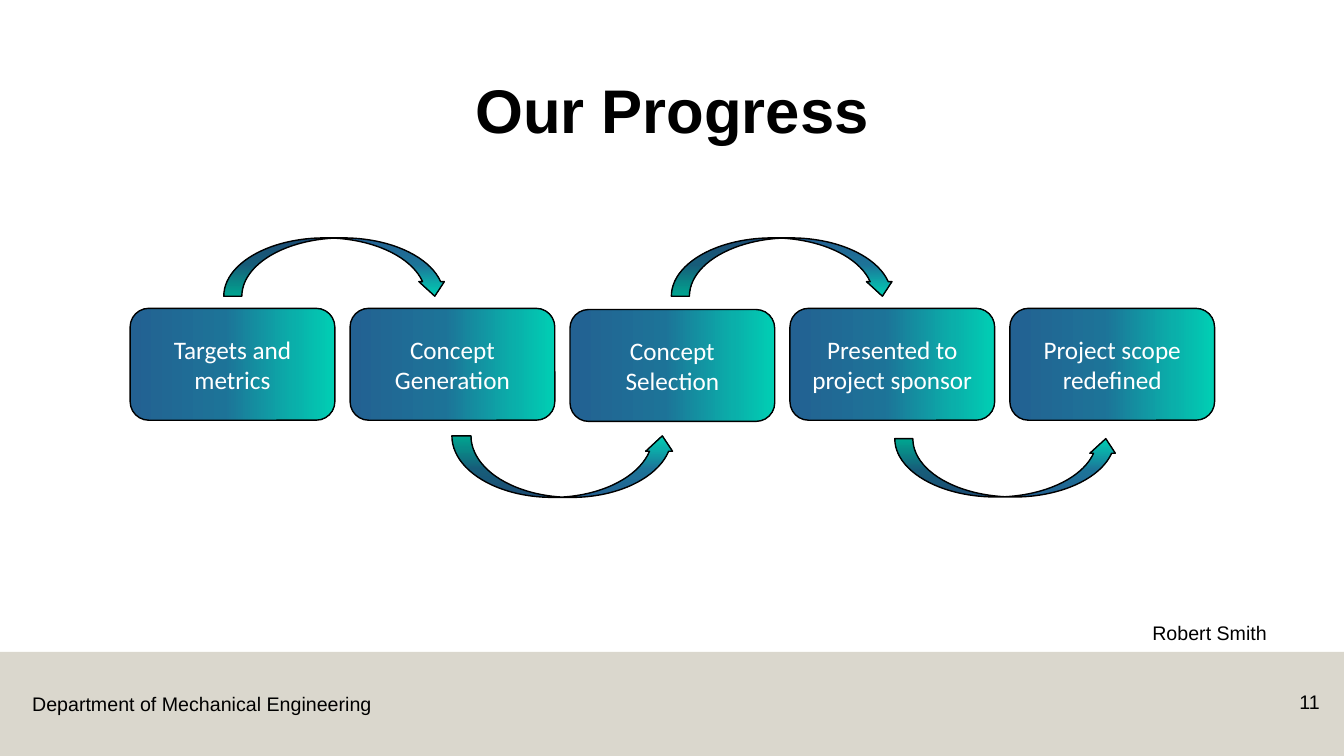
from lxml.etree import SubElement
from pptx import Presentation
from pptx.dml.color import RGBColor
from pptx.enum.shapes import MSO_SHAPE
from pptx.enum.text import MSO_ANCHOR, PP_ALIGN
from pptx.oxml.ns import qn
from pptx.util import Cm, Pt

BLACK = RGBColor(0x00, 0x00, 0x00)
WHITE = RGBColor(0xFF, 0xFF, 0xFF)
SAND = RGBColor(0xB7, 0xB0, 0x9C)
BLUE = RGBColor(0x23, 0x61, 0x92)
STEEL = RGBColor(0x1D, 0x73, 0x98)
TEAL = RGBColor(0x0A, 0xAF, 0xAA)
MINT = RGBColor(0x00, 0xCF, 0xB4)
STOPS = [(0, BLUE), (46, STEEL), (80, TEAL), (100, MINT)]

STEPS = ["Targets and metrics", "Concept Generation", "Concept Selection",
         "Presented to project sponsor", "Project scope redefined"]
# Centre of each arrow from the corner of the first step, height, above the row
ARROWS = [(5.18, -1.04, 1.47, True), (16.46, -1.04, 1.47, True),
          (10.93, 3.99, 1.55, False), (22.09, 4.02, 1.47, False)]


def write(frame, text, size, color, font="Arial", align=PP_ALIGN.LEFT):
    frame.text = text
    para = frame.paragraphs[0]
    para.alignment = align
    face = para.runs[0].font
    face.name, face.size = font, Pt(size)
    face.color.rgb = color
    return para


def label(slide, box, text, align=PP_ALIGN.LEFT):
    frame = slide.shapes.add_textbox(*map(Cm, box)).text_frame
    frame.word_wrap = True
    return write(frame, text, 14, BLACK, align=align)


def blend(shape):
    """Give a shape the blue to mint gradient and a black outline."""
    shape.shadow.inherit = False
    shape.fill.gradient()
    shape.fill.gradient_angle = 0
    stops = shape._element.spPr.find(qn("a:gradFill")).find(qn("a:gsLst"))
    for old in list(stops):
        stops.remove(old)
    for place, color in STOPS:
        stop = SubElement(stops, qn("a:gs"), pos=str(place * 1000))
        SubElement(stop, qn("a:srgbClr"), val=str(color))
    shape.line.color.rgb = BLACK
    shape.line.width = Pt(1)


def footer(slide, left, top, width, height):
    # Half-transparent band
    band = slide.shapes.add_shape(
        MSO_SHAPE.RECTANGLE, Cm(left), Cm(top), Cm(width), Cm(height))
    band.shadow.inherit = False
    band.fill.solid()
    band.fill.fore_color.rgb = SAND
    band.line.fill.background()
    tint = next(band._element.spPr.iter(qn("a:srgbClr")))
    SubElement(tint, qn("a:alpha"), val="50000")
    # Department, speaker and page number
    label(slide, (left + 0.56, top + 0.89, 9.12, 0.86),
          "Department of Mechanical Engineering")
    name = label(slide, (left + width - 5.08, top - 0.83, 5.08, 0.86),
                 "Robert Smith")
    name.line_spacing = 0.9
    label(slide, (left + width - 2.32, top + 0.82, 1.96, 1.02), "11",
          PP_ALIGN.RIGHT)


def heading(slide, left, top, width, height):
    title = slide.shapes.title
    title.left, title.top = Cm(left), Cm(top)
    title.width, title.height = Cm(width), Cm(height)
    frame = title.text_frame
    frame.vertical_anchor = MSO_ANCHOR.MIDDLE
    para = write(frame, "Our Progress", 44, BLACK, align=PP_ALIGN.CENTER)
    para.line_spacing = 0.9
    para.runs[0].font.bold = True


def arrow(slide, x, y, thick, above, span=5.64):
    """Place a curved arrow, centred on x and y, over or under the row."""
    shape = slide.shapes.add_shape(
        MSO_SHAPE.CURVED_RIGHT_ARROW, Cm(x - thick / 2), Cm(y - span / 2),
        Cm(thick), Cm(span))
    blend(shape)
    for spot, value in enumerate((0.31, 0.437, 0.25)):
        shape.adjustments[spot] = value
    shape.rotation = 270 if above else 90
    frame = shape._element.spPr.find(qn("a:xfrm"))
    frame.set("flipH", "1")
    if not above:
        frame.set("flipV", "1")


def flow(slide, left, top, width, height):
    wide = 5.16
    pitch = (width - wide) / (len(STEPS) - 1)
    # Steps, the middle one slightly lower
    for spot, text in enumerate(STEPS):
        drop = 0.03 if spot == 2 else 0
        step = slide.shapes.add_shape(
            MSO_SHAPE.ROUNDED_RECTANGLE, Cm(left + spot * pitch),
            Cm(top + drop), Cm(wide), Cm(height))
        blend(step)
        step.text_frame.word_wrap = True
        step.text_frame.vertical_anchor = MSO_ANCHOR.MIDDLE
        write(step.text_frame, text, 18, WHITE, "Calibri", PP_ALIGN.CENTER)
    # Arrows from step to step
    for x, y, thick, above in ARROWS:
        arrow(slide, left + x, top + y, thick, above)


def main():
    deck = Presentation()
    deck.slide_width, deck.slide_height = Cm(33.87), Cm(19.05)
    slide = deck.slides.add_slide(deck.slide_layouts[5])
    footer(slide, 0, 16.43, 33.87, 2.62)
    heading(slide, 2.34, 1.02, 29.21, 3.68)
    flow(slide, 3.28, 7.77, 27.33, 2.82)
    deck.save("out.pptx")


if __name__ == "__main__":
    main()
